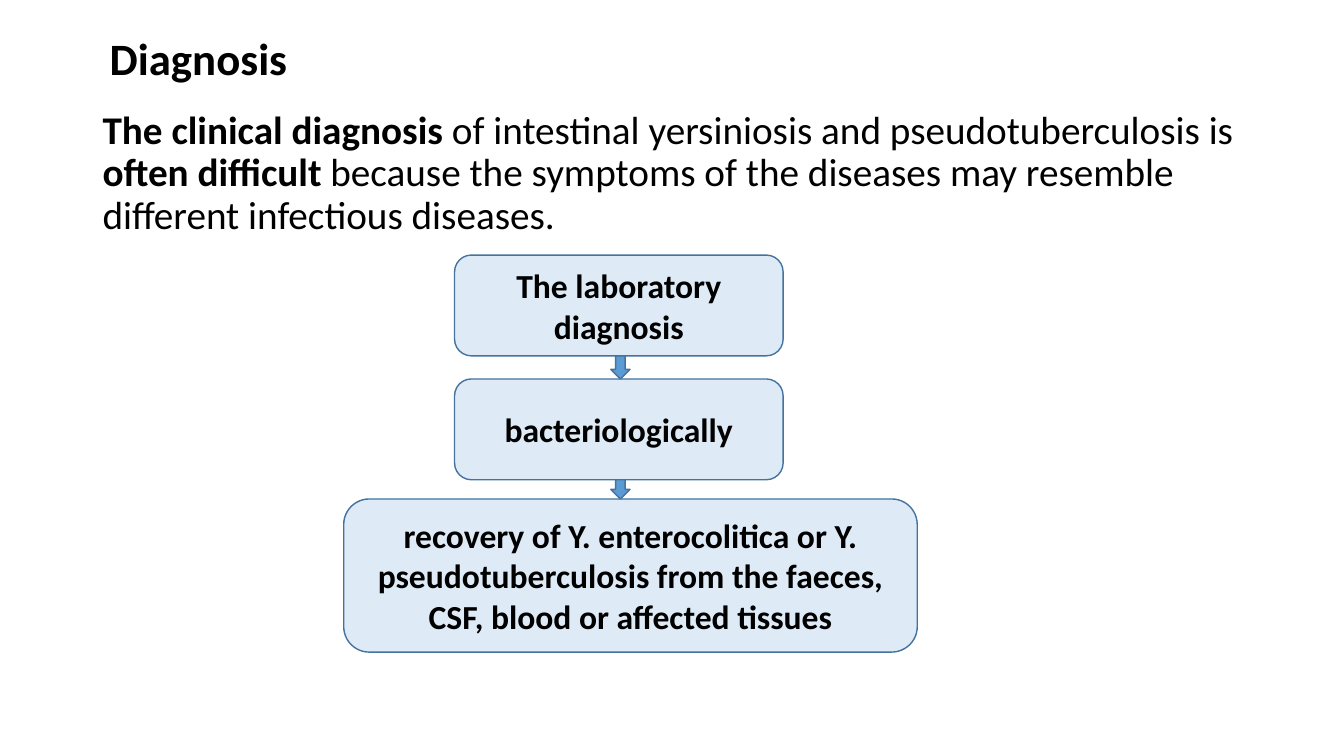
from pptx import Presentation
from pptx.dml.color import RGBColor
from pptx.enum.shapes import MSO_SHAPE
from pptx.enum.text import MSO_ANCHOR, PP_ALIGN
from pptx.util import Pt

ROUND = MSO_SHAPE.ROUNDED_RECTANGLE
DOWN = MSO_SHAPE.DOWN_ARROW
TOP, MIDDLE = MSO_ANCHOR.TOP, MSO_ANCHOR.MIDDLE
LEFT, CENTER = PP_ALIGN.LEFT, PP_ALIGN.CENTER


class Deck:
    font = "Calibri"
    colors = {"text": "000000", "box": "DEEBF7", "arrow": "5B9BD5", "edge": "43739E"}

    def __init__(self, width, height):
        self.deck = Presentation()
        self.deck.slide_width, self.deck.slide_height = Pt(width), Pt(height)
        self.slide = self.deck.slides.add_slide(self.deck.slide_layouts[6])

    def color(self, name):
        return RGBColor.from_string(self.colors[name])

    def label(self, shape, runs, size, anchor, align, spacing):
        frame = shape.text_frame
        frame.word_wrap = True
        frame.vertical_anchor = anchor
        para = frame.paragraphs[0]
        para.alignment = align
        para.line_spacing = spacing
        for text, bold in runs:
            run = para.add_run()
            run.text = text
            run.font.name = self.font
            run.font.size = Pt(size)
            run.font.bold = bold
            run.font.color.rgb = self.color("text")

    def text(self, area, runs, size, anchor=TOP):
        shape = self.slide.shapes.add_textbox(*map(Pt, area))
        self.label(shape, runs, size, anchor, LEFT, 0.9)

    def shape(self, kind, area, fill):
        shape = self.slide.shapes.add_shape(kind, *map(Pt, area))
        shape.shadow.inherit = False
        shape.fill.solid()
        shape.fill.fore_color.rgb = self.color(fill)
        shape.line.color.rgb = self.color("edge")
        shape.line.width = Pt(1)
        return shape

    def box(self, area, text):
        shape = self.shape(ROUND, area, "box")
        self.label(shape, [(text, True)], 24, MIDDLE, CENTER, 1.0)

    def arrow(self, left, top, width, end):
        self.shape(DOWN, (left, top, width, end - top), "arrow")


def main():
    page = Deck(960, 540)
    page.text((71.3, 7.2, 820.8, 72.7), [("Diagnosis", True)], 32, MIDDLE)
    page.text((66.2, 75.6, 828, 410.4), [
        ("The clinical diagnosis ", True),
        ("of intestinal yersiniosis and pseudotuberculosis is ", False),
        ("often difficult ", True),
        ("because the symptoms of the diseases may resemble "
         "different infectious diseases.", False),
    ], 28)

    steps = [
        ((324.7, 182.2, 234.7, 72), "The laboratory diagnosis"),
        ((324.7, 270.7, 234.7, 72), "bacteriologically"),
        ((245.5, 356.4, 409.7, 109.4),
         "recovery of Y. enterocolitica or Y. pseudotuberculosis "
         "from the faeces, CSF, blood or affected tissues"),
    ]
    for area, text in steps:
        page.box(area, text)
    for (area, _), (below, _) in zip(steps, steps[1:]):
        page.arrow(436.3, area[1] + area[3], 13.7, below[1])

    page.deck.save("out.pptx")


if __name__ == "__main__":
    main()
